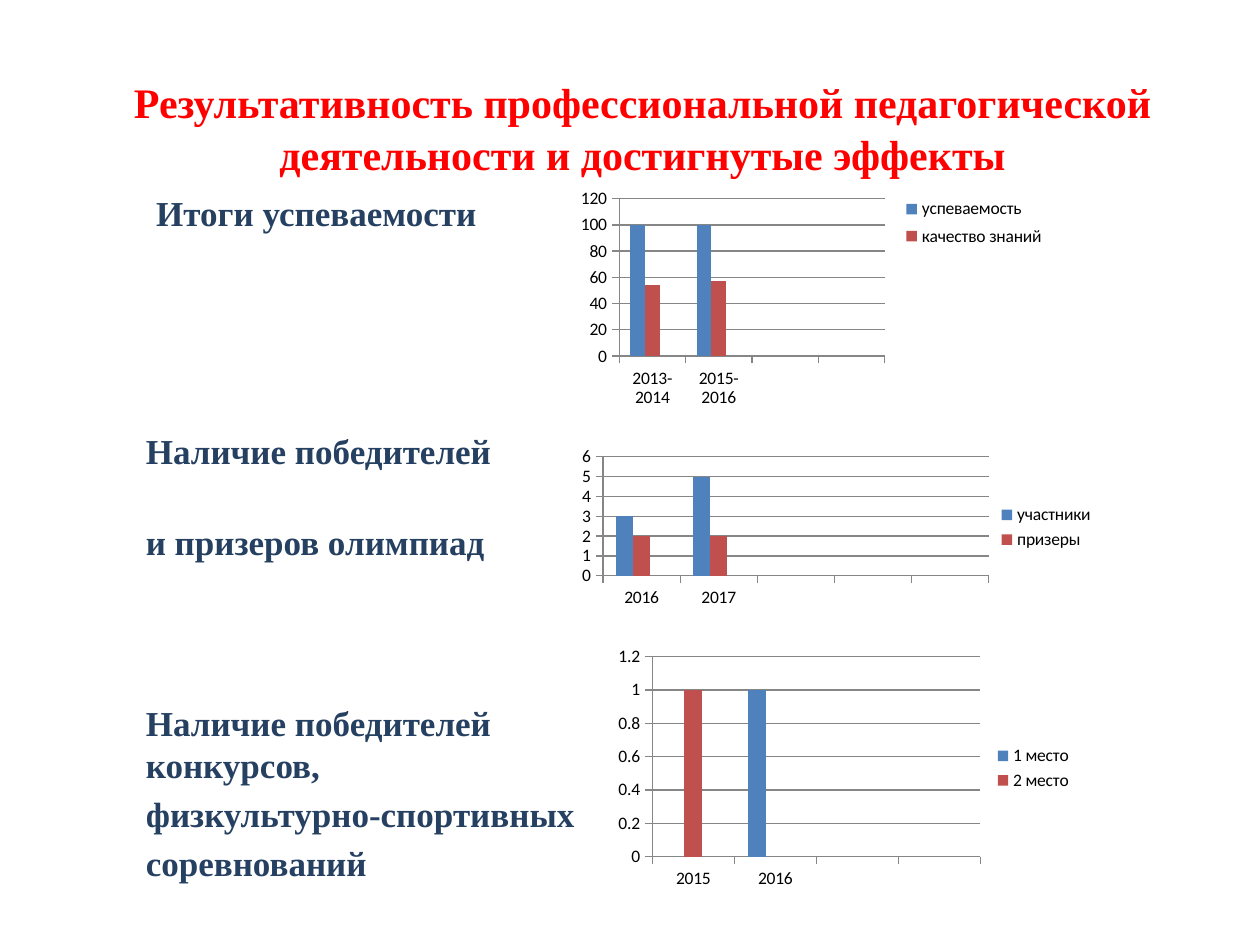
import lxml.etree
import pptx
import pptx.chart.data
import pptx.dml.color
import pptx.enum.chart
import pptx.enum.text
import pptx.oxml
import pptx.oxml.ns
import pptx.util
from pptx.util import Cm, Pt

RED = pptx.dml.color.RGBColor(0xFF, 0x00, 0x00)
NAVY = pptx.dml.color.RGBColor(0x25, 0x40, 0x61)
BLACK = pptx.dml.color.RGBColor(0x00, 0x00, 0x00)
GREY = pptx.dml.color.RGBColor(0x86, 0x86, 0x86)
SERIES_COLOURS = (
    pptx.dml.color.RGBColor(0x4F, 0x81, 0xBD),
    pptx.dml.color.RGBColor(0xC0, 0x50, 0x4D),
    pptx.dml.color.RGBColor(0x9B, 0xBB, 0x59),
)
SPARE_SERIES = "Series 3"


def add_text(slide, box, paragraphs, size, colour, line_height,
             align=pptx.enum.text.PP_ALIGN.LEFT,
             anchor=pptx.enum.text.MSO_ANCHOR.TOP):
    """Place bold serif text; paragraphs are (text, points of space before)."""
    frame = slide.shapes.add_textbox(*map(Cm, box)).text_frame
    frame.word_wrap = True
    frame.vertical_anchor = anchor
    for index, (text, space_before) in enumerate(paragraphs):
        paragraph = frame.paragraphs[0] if index == 0 else frame.add_paragraph()
        paragraph.text = text
        paragraph.alignment = align
        paragraph.line_spacing = Pt(line_height)
        paragraph.space_before = Pt(space_before)
        paragraph.font.name = "Times New Roman"
        paragraph.font.size = Pt(size)
        paragraph.font.bold = True
        paragraph.font.color.rgb = colour


def set_layout(element, fractions, inner=False):
    """Fix a plot area or legend at x, y, w, h as fractions of the chart."""
    for old in element.findall(pptx.oxml.ns.qn("c:layout")):
        element.remove(old)
    target = '<c:layoutTarget val="inner"/>' if inner else ""
    modes = '<c:xMode val="edge"/><c:yMode val="edge"/>'
    values = "".join(f'<c:{side} val="{value}"/>'
                     for side, value in zip("xywh", fractions))
    layout = pptx.oxml.parse_xml(
        f'<c:layout {pptx.oxml.ns.nsdecls("c")}><c:manualLayout>'
        f"{target}{modes}{values}</c:manualLayout></c:layout>")
    if inner:
        element.insert(0, layout)
    else:
        element.find(pptx.oxml.ns.qn("c:overlay")).addprevious(layout)


def hide_legend_entry(legend, index):
    entry = pptx.oxml.parse_xml(
        f'<c:legendEntry {pptx.oxml.ns.nsdecls("c")}>'
        f'<c:idx val="{index}"/><c:delete val="1"/></c:legendEntry>')
    legend.find(pptx.oxml.ns.qn("c:legendPos")).addnext(entry)


def add_column_chart(slide, box, categories, series, top, step, plot,
                     legend_box=None):
    """Place a clustered column chart with a legend on its right."""
    data = pptx.chart.data.CategoryChartData()
    data.categories = categories
    for name, values in series.items():
        data.add_series(name, values)
    data.add_series(SPARE_SERIES, [None] * len(categories))
    chart = slide.shapes.add_chart(
        pptx.enum.chart.XL_CHART_TYPE.COLUMN_CLUSTERED,
        *map(Cm, box), data).chart
    chart.has_title = False
    chart.font.name = "Calibri"
    chart.font.size = Pt(10)
    chart.font.color.rgb = BLACK

    # Columns
    columns = chart.plots[0]
    columns.gap_width = 150
    columns.overlap = 0
    columns.vary_by_categories = False
    for column_series, colour in zip(columns.series, SERIES_COLOURS):
        column_series.format.fill.solid()
        column_series.format.fill.fore_color.rgb = colour

    # Axes
    value_axis = chart.value_axis
    value_axis.minimum_scale = 0
    value_axis.maximum_scale = top
    value_axis.major_unit = step
    value_axis.has_major_gridlines = True
    for line in (value_axis.format.line, value_axis.major_gridlines.format.line,
                 chart.category_axis.format.line):
        line.color.rgb = GREY
        line.width = Pt(0.75)
    for axis in (value_axis, chart.category_axis):
        axis.major_tick_mark = pptx.enum.chart.XL_TICK_MARK.OUTSIDE
    value_axis.tick_labels.number_format = "General"
    value_axis.tick_labels.number_format_is_linked = False

    # Legend and plot area
    chart.has_legend = True
    chart.legend.position = pptx.enum.chart.XL_LEGEND_POSITION.RIGHT
    chart.legend.include_in_layout = False
    legend = chart.element.find(".//" + pptx.oxml.ns.qn("c:legend"))
    hide_legend_entry(legend, len(series))
    if legend_box:
        set_layout(legend, legend_box)
    plot_area = chart.element.find(".//" + pptx.oxml.ns.qn("c:plotArea"))
    set_layout(plot_area, plot, inner=True)


def main():
    deck = pptx.Presentation()
    deck.slide_width, deck.slide_height = Cm(25.4), Cm(19.05)
    slide = deck.slides.add_slide(deck.slide_layouts[6])

    # Title
    add_text(slide, (1.78, 0.76, 22.35, 3.61),
             [("Результативность профессиональной педагогической "
               "деятельности и достигнутые эффекты", 0)],
             24, RED, 29.7, pptx.enum.text.PP_ALIGN.CENTER,
             pptx.enum.text.MSO_ANCHOR.MIDDLE)

    # Headings beside the charts
    add_text(slide, (2.69, 8.53, 10.59, 8.48),
             [("Наличие победителей", 0),
              ("и призеров олимпиад", 28),
              ("Наличие победителей конкурсов,", 79.5),
              ("физкультурно-спортивных", 4),
              ("соревнований", 4)],
             20, NAVY, 24)
    add_text(slide, (2.9, 3.73, 7.19, 1.88),
             [("Итоги успеваемости", 0)], 20, NAVY, 24)

    # Academic results
    add_column_chart(slide, (11.51, 3.73, 9.73, 4.6),
                     ["2013-2014", "2015-2016", "", ""],
                     {"успеваемость": [100, 100, None, None],
                      "качество знаний": [54, 57, None, None]},
                     120, 20, (0.1, 0.06, 0.55, 0.69),
                     (0.68, 0.03, 0.31, 0.27))
    # Olympiads
    add_column_chart(slide, (11.51, 8.94, 10.8, 3.38),
                     ["2016", "2017", "", "", ""],
                     {"участники": [3, 5, None, None, None],
                      "призеры": [2, 2, None, None, None]},
                     6, 1, (0.06, 0.08, 0.72, 0.71))
    # Contests and sports
    add_column_chart(slide, (12.29, 12.93, 9.58, 5.11),
                     ["2015", "2016", "", ""],
                     {"1 место": [None, 1, None, None],
                      "2 место": [1, None, None, None]},
                     1.2, 0.2, (0.09, 0.06, 0.69, 0.79))

    deck.save("out.pptx")


if __name__ == "__main__":
    main()
